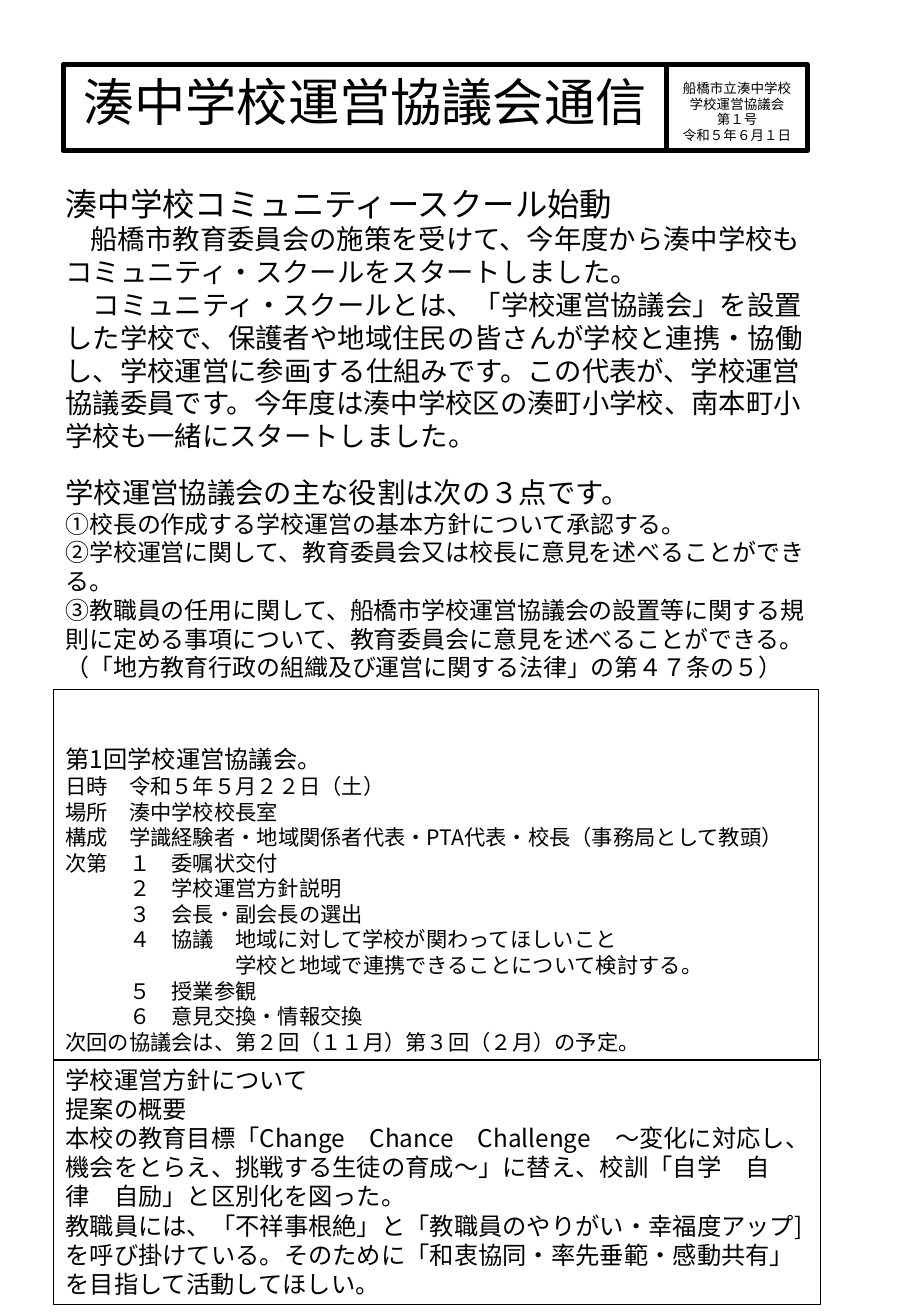
from dataclasses import dataclass

from lxml.etree import SubElement
from pptx import Presentation
from pptx.dml.color import RGBColor
from pptx.enum.shapes import MSO_SHAPE
from pptx.enum.text import MSO_ANCHOR, MSO_AUTO_SIZE, PP_ALIGN
from pptx.oxml.ns import qn
from pptx.util import Pt

BLACK = RGBColor(0, 0, 0)
BODY_FONT = "Noto Sans CJK JP"
MASTHEAD_FONT = "Arial"
LEFT, WIDTH = 31.7, 453.6
MASTHEAD_TOP, MASTHEAD_HEIGHT = 38.2, 51.1


@dataclass(frozen=True)
class Line:
    text: str
    size: float
    left_ems: int = 0
    first_indent: float = 0
    spacing: float = 1.0
    before: float = 0
    font: str = BODY_FONT
    align: PP_ALIGN = PP_ALIGN.LEFT


@dataclass(frozen=True)
class Section:
    top: float
    height: float
    lines: list[Line]
    width: float = WIDTH
    framed: bool = False


def issue_line(text: str, spacing: float = 0.8, before: float = 1.6) -> Line:
    return Line(text, 8, spacing=spacing, before=before,
                font=MASTHEAD_FONT, align=PP_ALIGN.CENTER)


MASTHEAD = Line("湊中学校運営協議会通信", 30.4, font=MASTHEAD_FONT, align=PP_ALIGN.CENTER)
ISSUE = [
    issue_line("船橋市立湊中学校", 1.5, 0),
    issue_line("学校運営協議会"),
    issue_line("第１号"),
    issue_line("令和５年６月１日"),
]

LAUNCH = [
    Line("湊中学校コミュニティースクール始動", 19.2),
    Line("船橋市教育委員会の施策を受けて、今年度から湊中学校もコミュニティ・スクールをスタートしました。",
         16.2, first_indent=15),
    Line("コミュニティ・スクールとは、「学校運営協議会」を設置した学校で、保護者や地域住民の皆さんが学校と連携・協働し、"
         "学校運営に参画する仕組みです。この代表が、学校運営協議委員です。"
         "今年度は湊中学校区の湊町小学校、南本町小学校も一緒にスタートしました。",
         16.2, first_indent=16.2),
]
ROLES = [Line("学校運営協議会の主な役割は次の３点です。", 16.8)] + [
    Line(text, 14.2) for text in (
        "①校長の作成する学校運営の基本方針について承認する。",
        "②学校運営に関して、教育委員会又は校長に意見を述べることができる。",
        "③教職員の任用に関して、船橋市学校運営協議会の設置等に関する規則に定める事項について、"
        "教育委員会に意見を述べることができる。",
        "（「地方教育行政の組織及び運営に関する法律」の第４７条の５）",
    )
]
MEETING = [Line("第1回学校運営協議会。", 14.4)] + [
    Line(text, 12.6, left_ems=ems) for text, ems in (
        ("日時　令和５年５月２２日（土）", 0),
        ("場所　湊中学校校長室", 0),
        ("構成　学識経験者・地域関係者代表・PTA代表・校長（事務局として教頭）", 0),
        ("次第　１　委嘱状交付", 0),
        ("２　学校運営方針説明", 3),
        ("３　会長・副会長の選出", 3),
        ("４　協議　地域に対して学校が関わってほしいこと", 3),
        ("学校と地域で連携できることについて検討する。", 8),
        ("５　授業参観", 3),
        ("６　意見交換・情報交換", 3),
        ("次回の協議会は、第２回（１１月）第３回（２月）の予定。", 0),
    )
]
POLICY = [
    Line(text, 14.4) for text in (
        "学校運営方針について",
        "提案の概要",
        "本校の教育目標「Change　Chance　Challenge　～変化に対応し、機会をとらえ、"
        "挑戦する生徒の育成～」に替え、校訓「自学　自律　自励」と区別化を図った。",
        "教職員には、「不祥事根絶」と「教職員のやりがい・幸福度アップ]",
        "を呼び掛けている。そのために「和衷協同・率先垂範・感動共有」を目指して活動してほしい。",
    )
]
SECTIONS = [
    Section(92.9, 178.6, LAUNCH),
    Section(274.3, 133.2, ROLES),
    Section(408.7, 219.6, MEETING, framed=True),
    Section(627.8, 145, POLICY, width=454.7, framed=True),
]


def place(shape, left: float, top: float, width: float, height: float) -> None:
    shape.left, shape.top = Pt(left), Pt(top)
    shape.width, shape.height = Pt(width), Pt(height)


def outline(shape, weight: float) -> None:
    shape.fill.background()
    shape.line.color.rgb = BLACK
    shape.line.width = Pt(weight)


def add_frame(slide, left: float, top: float, width: float, height: float, weight: float):
    frame = slide.shapes.add_shape(
        MSO_SHAPE.RECTANGLE, Pt(left), Pt(top), Pt(width), Pt(height))
    frame.shadow.inherit = False
    outline(frame, weight)
    return frame


def write(shape, lines: list[Line], anchor: MSO_ANCHOR) -> None:
    body = shape.text_frame
    body.word_wrap = True
    body.auto_size = MSO_AUTO_SIZE.NONE
    body.vertical_anchor = anchor
    for index, line in enumerate(lines):
        paragraph = body.add_paragraph() if index else body.paragraphs[0]
        paragraph.text = line.text
        paragraph.alignment = line.align
        paragraph.line_spacing = line.spacing
        paragraph.space_before = Pt(line.before)
        properties = paragraph._p.get_or_add_pPr()
        properties.set("marL", str(Pt(line.left_ems * line.size)))
        properties.set("indent", str(Pt(line.first_indent)))
        paragraph.font.size = Pt(line.size)
        paragraph.font.name = line.font
        paragraph.font.color.rgb = BLACK
        east_asian = SubElement(properties.find(qn("a:defRPr")), qn("a:ea"))
        east_asian.set("typeface", BODY_FONT)


def add_section(slide, section: Section) -> None:
    area = (LEFT, section.top, section.width, section.height)
    if section.framed:
        box = add_frame(slide, *area, 0.75)
    else:
        box = slide.shapes.add_textbox(*(Pt(length) for length in area))
    write(box, section.lines, MSO_ANCHOR.BOTTOM)


def main() -> None:
    presentation = Presentation()
    presentation.slide_width, presentation.slide_height = Pt(540), Pt(779.76)
    slide = presentation.slides.add_slide(presentation.slide_layouts[5])

    masthead = slide.shapes.title
    place(masthead, 37.4, MASTHEAD_TOP, 357.8, MASTHEAD_HEIGHT)
    outline(masthead, 3)
    write(masthead, [MASTHEAD], MSO_ANCHOR.TOP)

    issue = add_frame(slide, 395.3, MASTHEAD_TOP, 83.3, MASTHEAD_HEIGHT, 3)
    write(issue, ISSUE, MSO_ANCHOR.MIDDLE)

    for section in SECTIONS:
        add_section(slide, section)
    presentation.save("out.pptx")


if __name__ == "__main__":
    main()
